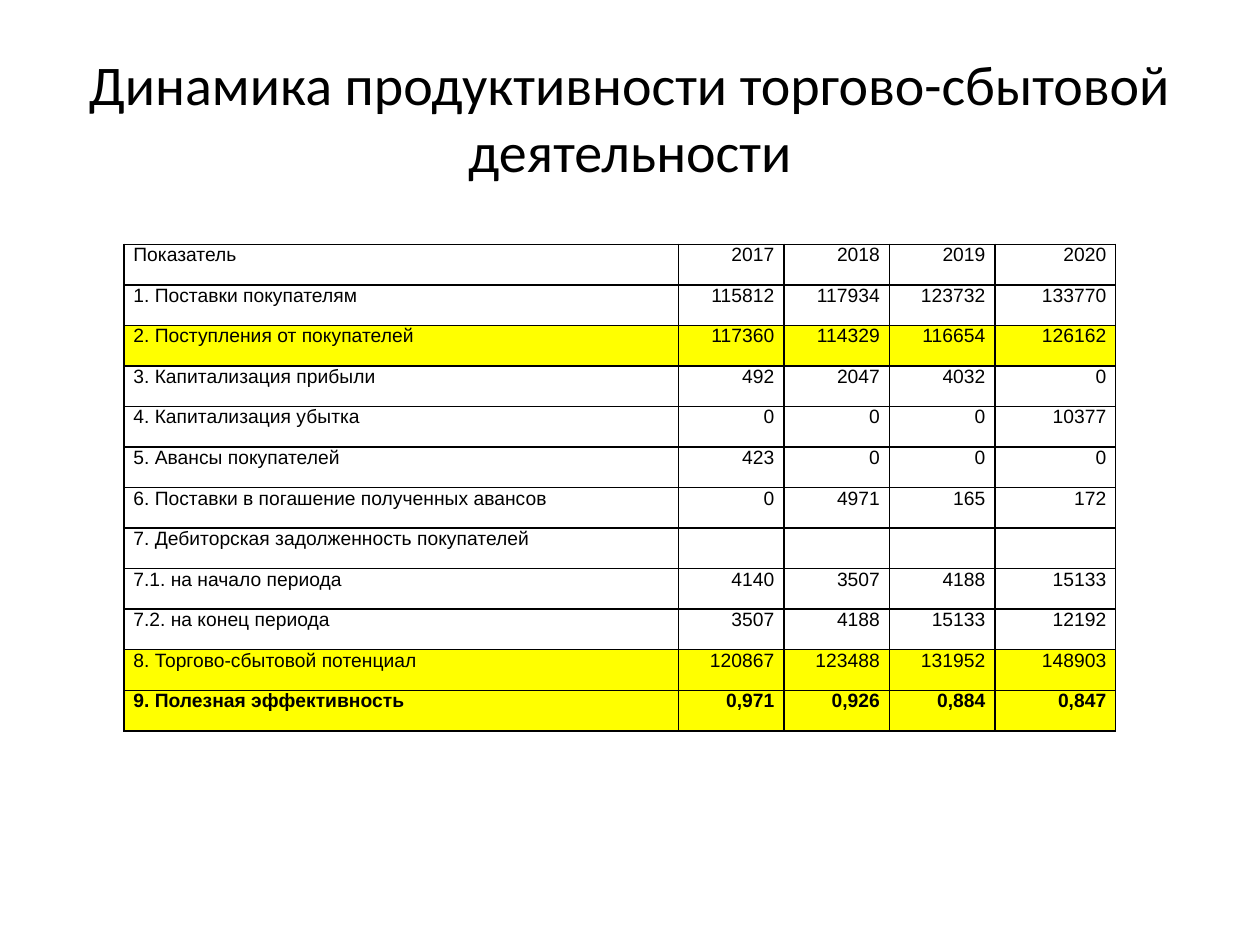
from lxml import etree
from pptx import Presentation
from pptx import util as u
from pptx.dml.color import RGBColor
from pptx.enum import text
from pptx.oxml import ns

BLACK = RGBColor(0x00, 0x00, 0x00)
YELLOW = RGBColor(0xFF, 0xFF, 0x00)

TITLE = "Динамика продуктивности торгово-сбытовой деятельности"
INDICATORS = [
    ("Показатель", "2017", "2018", "2019", "2020"),
    ("1. Поставки покупателям", "115812", "117934", "123732", "133770"),
    ("2. Поступления от покупателей", "117360", "114329", "116654", "126162"),
    ("3. Капитализация прибыли", "492", "2047", "4032", "0"),
    ("4. Капитализация убытка", "0", "0", "0", "10377"),
    ("5. Авансы покупателей", "423", "0", "0", "0"),
    ("6. Поставки в погашение полученных авансов", "0", "4971", "165", "172"),
    ("7. Дебиторская задолженность покупателей", "", "", "", ""),
    ("7.1. на начало периода", "4140", "3507", "4188", "15133"),
    ("7.2. на конец периода", "3507", "4188", "15133", "12192"),
    ("8. Торгово-сбытовой потенциал", "120867", "123488", "131952", "148903"),
    ("9. Полезная эффективность", "0,971", "0,926", "0,884", "0,847"),
]
HIGHLIGHTED_ROWS = {2, 10, 11}
BOLD_ROWS = {11}
COLUMN_WIDTHS = (316.8, 60.3, 60.3, 60.3, 69.1)
ROW_HEIGHT = 23.16


class SlideBuilder:
    """Holds the style and the current slide."""

    title_font, title_size = "Calibri", 32
    table_font, table_size = "Arial", 11
    cell_inset = 5.4
    border_width = 1

    def __init__(self, slide):
        self.slide = slide

    def add_run(self, paragraph, words, font, size, bold=False):
        run = paragraph.add_run()
        run.text = words
        run.font.name = font
        run.font.size = u.Pt(size)
        run.font.bold = bold
        run.font.color.rgb = BLACK

    def add_title(self, words, left, top, width, height):
        box = self.slide.shapes.add_textbox(
            u.Pt(left), u.Pt(top), u.Pt(width), u.Pt(height))
        frame = box.text_frame
        frame.word_wrap = True
        frame.vertical_anchor = text.MSO_ANCHOR.MIDDLE
        paragraph = frame.paragraphs[0]
        paragraph.alignment = text.PP_ALIGN.CENTER
        self.add_run(paragraph, words, self.title_font, self.title_size)

    def add_borders(self, cell):
        properties = cell._tc.get_or_add_tcPr()
        for position, side in enumerate(("lnL", "lnR", "lnT", "lnB")):
            line = etree.Element(ns.qn(f"a:{side}"), w=str(u.Pt(self.border_width)))
            fill = etree.SubElement(line, ns.qn("a:solidFill"))
            etree.SubElement(fill, ns.qn("a:srgbClr"), val=str(BLACK))
            properties.insert(position, line)

    def fill_cell(self, cell, words, alignment, highlighted, bold):
        cell.margin_left = cell.margin_right = u.Pt(self.cell_inset)
        cell.margin_top = cell.margin_bottom = 0
        if highlighted:
            cell.fill.solid()
            cell.fill.fore_color.rgb = YELLOW
        else:
            cell.fill.background()
        self.add_borders(cell)
        if words:
            paragraph = cell.text_frame.paragraphs[0]
            paragraph.alignment = alignment
            self.add_run(paragraph, words, self.table_font, self.table_size, bold)

    def add_table(self, rows, left, top, widths, row_height):
        table = self.slide.shapes.add_table(
            len(rows), len(widths), u.Pt(left), u.Pt(top),
            u.Pt(sum(widths)), u.Pt(row_height * len(rows))).table
        table.first_row = table.horz_banding = False
        for column, width in zip(table.columns, widths):
            column.width = u.Pt(width)
        for row_index, values in enumerate(rows):
            table.rows[row_index].height = u.Pt(row_height)
            for column_index, words in enumerate(values):
                alignment = text.PP_ALIGN.RIGHT if column_index else text.PP_ALIGN.LEFT
                self.fill_cell(table.cell(row_index, column_index), words, alignment,
                               row_index in HIGHLIGHTED_ROWS, row_index in BOLD_ROWS)


def main():
    presentation = Presentation()
    presentation.slide_width, presentation.slide_height = u.Pt(720), u.Pt(540)
    slide = presentation.slides.add_slide(presentation.slide_layouts[6])
    builder = SlideBuilder(slide)

    # Title
    builder.add_title(TITLE, 36, 21.6, 648, 90)

    # Indicators by year
    builder.add_table(INDICATORS, 70.8, 139.7, COLUMN_WIDTHS, ROW_HEIGHT)

    presentation.save("out.pptx")


if __name__ == "__main__":
    main()
